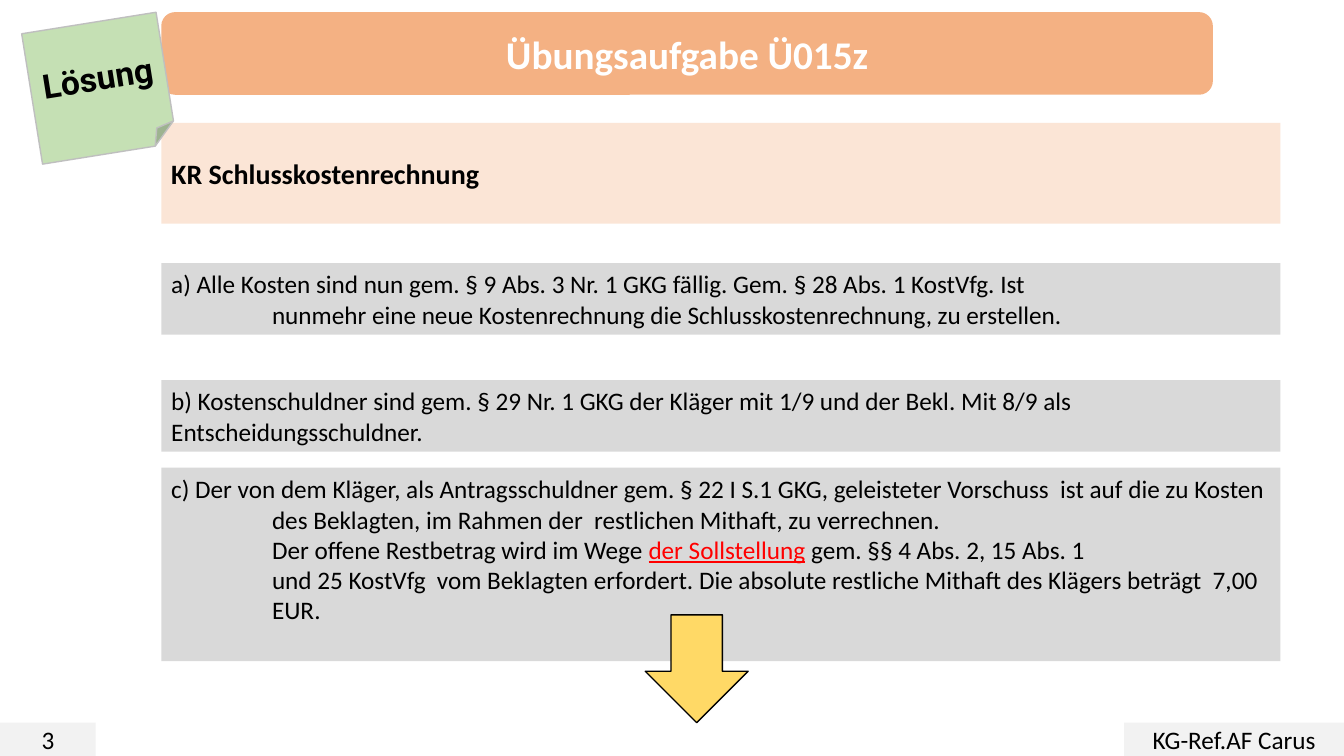
from pptx import Presentation
from pptx.dml.color import RGBColor
from pptx.enum.shapes import MSO_SHAPE
from pptx.enum.text import MSO_ANCHOR, PP_ALIGN
from pptx.util import Inches, Pt

COLORS = {
    "black": "000000",
    "white": "FFFFFF",
    "red": "FF0000",
    "orange": "F4B183",
    "peach": "FBE5D6",
    "answer": "D9D9D9",
    "footer": "F2F2F2",
    "note": "C5E0B4",
    "note_edge": "BFBFBF",
    "arrow": "FFD966",
}
LEFT, WIDTH = 1.6, 11.1
INDENT = 1


def color(name):
    return RGBColor.from_string(COLORS[name])


def add_box(page, kind, left, top, width, height, fill, line=None):
    box = page.shapes.add_shape(
        kind, Inches(left), Inches(top), Inches(width), Inches(height))
    box.shadow.inherit = False
    box.fill.solid()
    box.fill.fore_color.rgb = color(fill)
    if line:
        box.line.color.rgb = color(line)
        box.line.width = Pt(1)
    else:
        box.line.fill.background()
    frame = box.text_frame
    frame.word_wrap = True
    frame.vertical_anchor = MSO_ANCHOR.MIDDLE
    return box


def add_span(para, text, size=18, tone="black", bold=False, underline=False, font="Calibri"):
    span = para.add_run()
    span.text = text
    span.font.name = font
    span.font.size = Pt(size)
    span.font.bold = bold
    span.font.underline = underline
    span.font.color.rgb = color(tone)


def add_label(box, text, align=PP_ALIGN.CENTER, **style):
    para = box.text_frame.paragraphs[0]
    para.alignment = align
    add_span(para, text, **style)


def indent_paragraph(para, left, first):
    properties = para._p.get_or_add_pPr()
    properties.set("marL", str(Inches(left)))
    properties.set("indent", str(Inches(first)))


def add_answer(page, top, height, paragraphs, hanging=False):
    box = add_box(page, MSO_SHAPE.RECTANGLE, LEFT, top, WIDTH, height, "answer")
    frame = box.text_frame
    for index, spans in enumerate(paragraphs):
        para = frame.add_paragraph() if index else frame.paragraphs[0]
        para.alignment = PP_ALIGN.LEFT
        if index:
            indent_paragraph(para, INDENT, 0)
        elif hanging:
            indent_paragraph(para, INDENT, -INDENT)
        for text, style in spans:
            add_span(para, text, **style)
    return box


def add_answers(page):
    add_answer(page, 2.61, 0.71, [
        [("a) Alle Kosten sind nun gem. § 9 Abs. 3 Nr. 1 GKG fällig. "
          "Gem. § 28 Abs. 1 KostVfg. Ist", {})],
        [("nunmehr eine neue Kostenrechnung die Schlusskostenrechnung, zu erstellen.", {})],
    ])
    add_answer(page, 3.77, 0.71, [
        [("b) Kostenschuldner sind gem. § 29 Nr. 1 GKG der Kläger mit 1/9 und der Bekl. "
          "Mit 8/9 als Entscheidungsschuldner.", {})],
    ])
    offset = add_answer(page, 4.64, 1.92, [
        [("c) Der von dem Kläger, als Antragsschuldner gem. § 22 I S.1 GKG, geleisteter "
          "Vorschuss  ist auf die zu Kosten des Beklagten, im Rahmen der  restlichen "
          "Mithaft, zu verrechnen.", {})],
        [("Der offene Restbetrag wird im Wege ", {}),
         ("der Sollstellung", {"tone": "red", "underline": True}),
         (" gem. §§ 4 Abs. 2, 15 Abs. 1", {})],
        [("und 25 KostVfg  vom Beklagten erfordert. Die absolute restliche Mithaft "
          "des Klägers beträgt  7,00", {})],
        [("EUR.", {})],
    ], hanging=True)
    offset.text_frame.margin_bottom = Inches(0.35)


def add_headings(page):
    subject = add_box(page, MSO_SHAPE.RECTANGLE, LEFT, 1.22, WIDTH, 1, "peach")
    add_label(subject, "KR Schlusskostenrechnung", PP_ALIGN.LEFT, size=20, bold=True)
    title = add_box(page, MSO_SHAPE.ROUNDED_RECTANGLE, LEFT, 0.12, 10.43, 0.82, "orange")
    add_label(title, "Übungsaufgabe Ü015z", size=28, tone="white", bold=True)
    note = add_box(page, MSO_SHAPE.FOLDED_CORNER, 0.31, 0.22, 1.35, 1.31, "note", "note_edge")
    note.rotation = 350.9
    add_label(note, "Lösung", size=24, bold=True, font="Roboto")


def add_footer(page):
    for left, width, text in ((0, 0.95, "3"), (11.15, 2.18, "KG-Ref.AF Carus")):
        box = add_box(page, MSO_SHAPE.RECTANGLE, left, 7.17, width, 0.33, "footer")
        add_label(box, text)


def main():
    deck = Presentation()
    deck.slide_width, deck.slide_height = Inches(13.33), Inches(7.5)
    page = deck.slides.add_slide(deck.slide_layouts[6])
    add_footer(page)
    add_answers(page)
    add_headings(page)
    add_box(page, MSO_SHAPE.DOWN_ARROW, 6.4, 6.1, 1.02, 1.07, "arrow", "black")
    deck.save("out.pptx")


if __name__ == "__main__":
    main()
